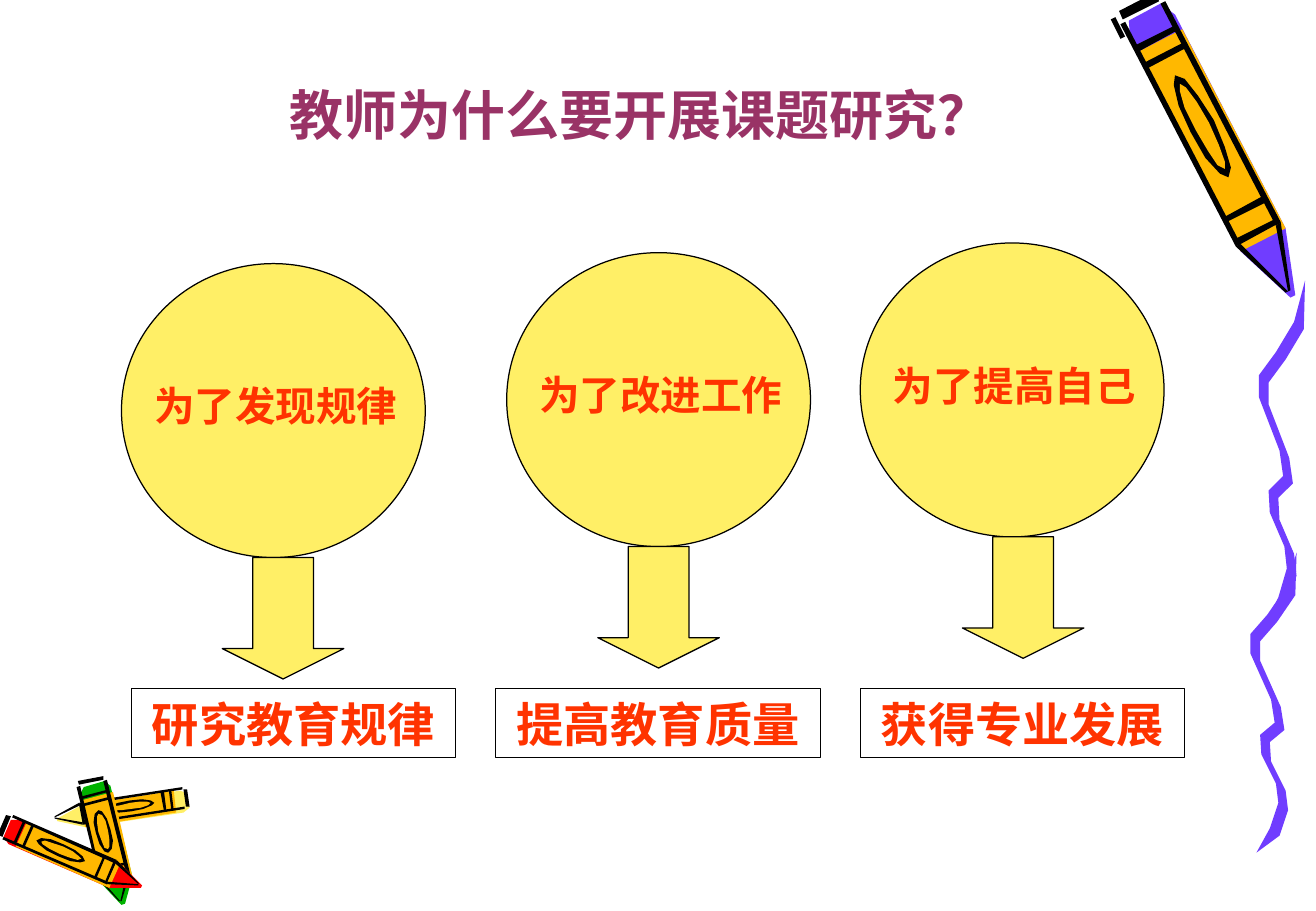
from dataclasses import dataclass
from math import cos, hypot, pi, sin

from lxml import etree
from pptx import Presentation
from pptx import util as u
from pptx.dml.color import RGBColor
from pptx.enum import shapes, text
from pptx.oxml.ns import qn

EMU_PER_PX = 9144  # 100 px to the inch
BLACK = RGBColor(0x00, 0x00, 0x00)
VIOLET = RGBColor(0x70, 0x3D, 0xFF)
ORANGE = RGBColor(0xFF, 0xB8, 0x00)
YELLOW = RGBColor(0xFF, 0xEF, 0x66)
RED = RGBColor(0xFF, 0x00, 0x00)
GREEN = RGBColor(0x00, 0xB2, 0x00)
PLUM = RGBColor(0x99, 0x33, 0x66)
VERMILION = RGBColor(0xFF, 0x33, 0x00)
SANS = "Noto Sans CJK SC"
SERIF = "Times New Roman"

# Circle left and top, arrow left, box left, reason, outcome
REASONS = [
    (100, 217, 183, 108, "为了发现规律", "研究教育规律"),
    (417, 208, 492, 408, "为了改进工作", "提高教育质量"),
    (708, 200, 792, 708, "为了提高自己", "获得专业发展"),
]

# Bends of the ribbon's middle, from its upper end
RIBBON_BENDS = [(0, 0), (-5, 37), (-20, 62), (-34, 81), (-34, 99), (-17, 143), (-14, 164),
                (-26, 176), (-25, 194), (-13, 222), (-11, 240), (-18, 264), (-33, 284)]
RIBBON_HALF = (4, 3)


@dataclass
class Crayon:
    """A crayon from butt to tip; half is half its thickness, color that of its wax."""
    butt: tuple
    tip: tuple
    half: int
    color: RGBColor

    def place(self, along, across, shift=0):
        """Turn a share of the length and a share of the half thickness into px."""
        run, rise = self.tip[0] - self.butt[0], self.tip[1] - self.butt[1]
        length = hypot(run, rise)
        x = self.butt[0] + along * run + across * self.half * rise / length
        y = self.butt[1] + along * rise - across * self.half * run / length
        return round(x + shift * self.half), round(y + shift * self.half)


SMALL_CRAYONS = [
    Crayon((153, 657), (45, 673), 9, YELLOW),
    Crayon((75, 643), (99, 742), 13, GREEN),
    Crayon((4, 680), (114, 728), 11, RED),
]
BIG_CRAYON = Crayon((938, 6), (1060, 240), 21, VIOLET)

# Crayon parts as (along, across) shares
SILHOUETTE = [(0, -0.7), (0, 0.7), (0.05, 1), (0.8, 1), (1, 0.1), (1, -0.1), (0.8, -1), (0.05, -1)]
WRAPPER_START, WRAPPER_END = 0.1, 0.8
RINGS = (0.1, 0.16, 0.7, 0.78)
RING_THICKNESS = 0.02
EDGE_INNER = 0.78
PAINT_SHIFT = 0.2  # colour sits a little off the ink, in half thicknesses


def bar(start, end, low, high):
    return [(start, low), (start, high), (end, high), (end, low)]


def oval(along_radius, across_radius, corners=12):
    angles = [2 * pi * i / corners for i in range(corners)]
    return [(0.42 + along_radius * cos(a), across_radius * sin(a)) for a in angles]


def px(length):
    return u.Emu(length * EMU_PER_PX)


def write(shape, words, size, color, font=SANS, align=text.PP_ALIGN.CENTER):
    """Set one bold paragraph, centred vertically in the shape."""
    frame = shape.text_frame
    frame.word_wrap = True
    frame.vertical_anchor = text.MSO_ANCHOR.MIDDLE
    paragraph = frame.paragraphs[0]
    paragraph.alignment = align
    run = paragraph.add_run()
    run.text = words
    run.font.size = u.Pt(size)
    run.font.bold = True
    run.font.color.rgb = color
    run.font.name = font
    etree.SubElement(run.font._element, qn("a:ea"), typeface=SANS)


class Board:
    """Holds the current slide and its line style."""

    def __init__(self, slide, outline=BLACK, outline_width=0.75):
        self.shapes = slide.shapes
        self.outline = outline
        self.outline_width = outline_width

    def patch(self, points, color):
        builder = self.shapes.build_freeform(*points[0], scale=EMU_PER_PX)
        builder.add_line_segments(points[1:], close=True)
        patch = builder.convert_to_shape()
        patch.shadow.inherit = False
        patch.fill.solid()
        patch.fill.fore_color.rgb = color
        patch.line.fill.background()

    def crayon(self, crayon):
        """Lay the shifted paint first, then the black ink over it."""
        def part(outline, color, shift=0):
            self.patch([crayon.place(*point, shift) for point in outline], color)

        part(SILHOUETTE, crayon.color, PAINT_SHIFT)
        part(bar(WRAPPER_START, WRAPPER_END, -1, 1), ORANGE, PAINT_SHIFT)
        part(bar(-0.02, 0.01, -0.8, 0.8), BLACK)
        for ring in RINGS:
            part(bar(ring, ring + RING_THICKNESS, -0.9, 0.9), BLACK)
        part(oval(0.18, 0.5), BLACK)
        part(oval(0.15, 0.3), ORANGE)
        for side in (-1, 1):
            part(bar(0.02, WRAPPER_END, side * EDGE_INNER, side), BLACK)
            part([(WRAPPER_END, side), (1, side * 0.1), (1, 0),
                  (WRAPPER_END, side * EDGE_INNER)], BLACK)

    def ribbon(self, left, top, stretch):
        """Widen the line of bends into a band that is pointed at both ends."""
        middle = [(left + x, round(top + y * stretch)) for x, y in RIBBON_BENDS]
        dx, dy = RIBBON_HALF
        right = [(x + dx, y + dy) for x, y in middle[1:-1]]
        left_side = [(x - dx, y - dy) for x, y in middle[1:-1]]
        self.patch([middle[0], *right, middle[-1], *reversed(left_side)], VIOLET)

    def stroke(self, x1, y1, x2, y2, width):
        line = self.shapes.add_connector(
            shapes.MSO_CONNECTOR.STRAIGHT, px(x1), px(y1), px(x2), px(y2))
        line.line.color.rgb = self.outline
        line.line.width = u.Pt(width)
        etree.SubElement(line._element.spPr, qn("a:effectLst"))

    def preset(self, kind, left, top, width, height, fill=None):
        shape = self.shapes.add_shape(kind, px(left), px(top), px(width), px(height))
        shape.shadow.inherit = False
        if fill is None:
            shape.fill.background()
        else:
            shape.fill.solid()
            shape.fill.fore_color.rgb = fill
        shape.line.color.rgb = self.outline
        shape.line.width = u.Pt(self.outline_width)
        return shape

    def label(self, left, top, width, height, words, **style):
        write(self.shapes.add_textbox(px(left), px(top), px(width), px(height)), words, **style)


def main():
    deck = Presentation()
    deck.slide_width, deck.slide_height = px(1083), px(750)
    board = Board(deck.slides.add_slide(deck.slide_layouts[6]))

    for crayon in SMALL_CRAYONS:
        board.crayon(crayon)
    board.ribbon(1067, 455, stretch=0.87)
    board.ribbon(1074, 231, stretch=1)
    board.crayon(BIG_CRAYON)
    board.stroke(916, 15, 924, 31, width=3)

    board.label(67, 62, 921, 63, "教师为什么要开展课题研究？", size=32, color=PLUM)

    kinds = shapes.MSO_SHAPE
    for left, top, arrow_left, box_left, reason, outcome in REASONS:
        board.preset(kinds.OVAL, left, top, 250, 242, YELLOW)
        board.label(left + 17, top + 92, 225, 50, reason, size=24, color=VERMILION,
                    font=SERIF, align=text.PP_ALIGN.LEFT)
        arrow = board.preset(kinds.DOWN_ARROW, arrow_left, top + 242, 100, 100, YELLOW)
        arrow.adjustments[1] = 0.25
        box = board.preset(kinds.RECTANGLE, box_left, 567, 267, 57)
        write(box, outcome, size=28, color=VERMILION)

    deck.save("out.pptx")


if __name__ == "__main__":
    main()
